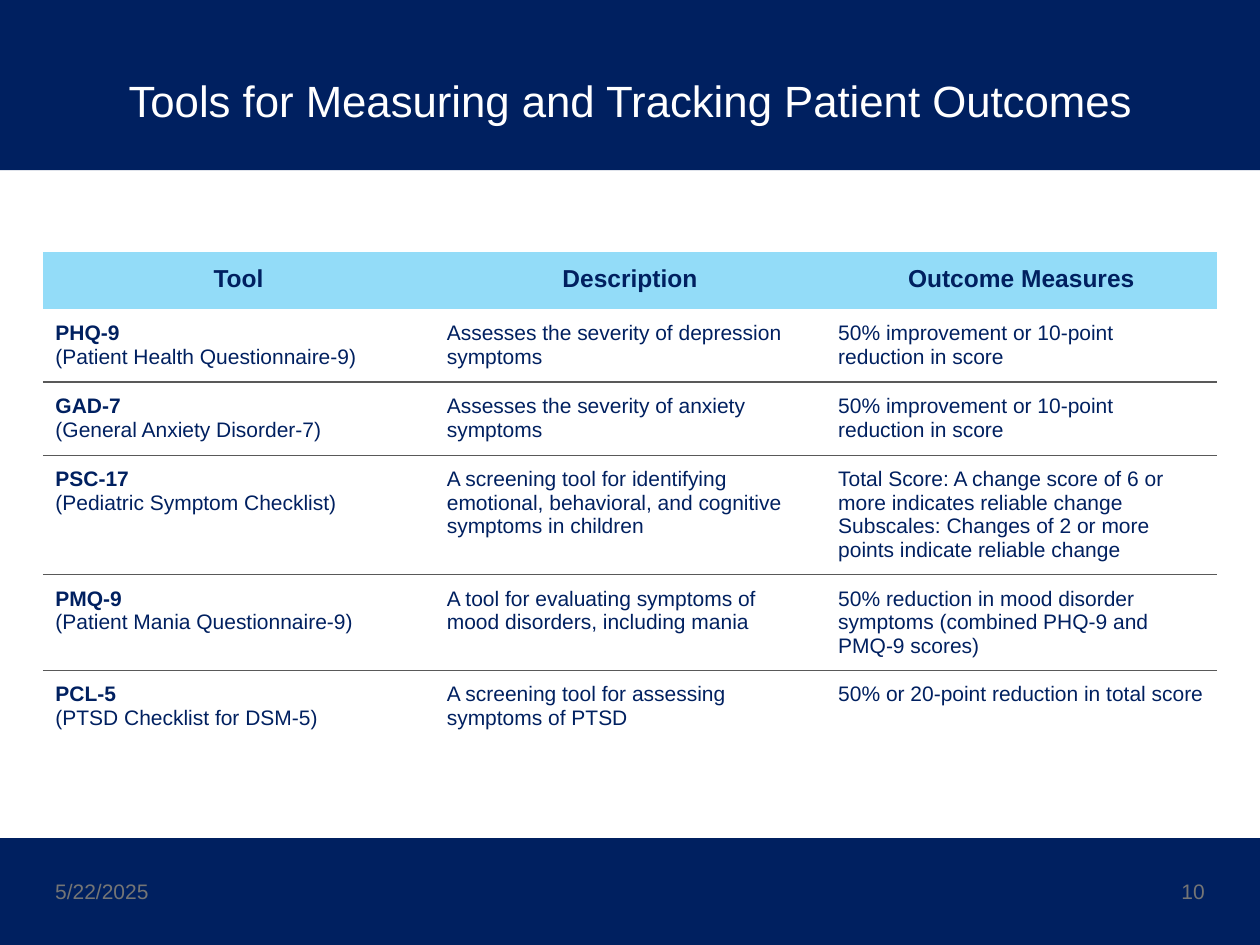
from dataclasses import dataclass

from lxml import etree
from pptx import Presentation
from pptx import util as u
from pptx.dml.color import RGBColor
from pptx.enum import shapes, text
from pptx.oxml.ns import qn

WIDTH, HEIGHT = u.Inches(10), u.Inches(7.5)
NAVY, SKY, WHITE, GRAY, RULE = "002060", "93DCF8", "FFFFFF", "757575", "595959"
NO_STYLE = "{2D5ABB26-0587-4C30-8999-92F81FD0307C}"
MARGIN = 0.034
CONTENT = 1 - 2 * MARGIN
HEADER_ROW, BODY_ROW = u.Inches(0.45), u.Inches(0.58)
INSET = u.Inches(0.1)


@dataclass
class Box:
    left: float
    top: float
    width: float
    height: float

    def lengths(self) -> tuple[int, int, int, int]:
        return (int(self.left * WIDTH), int(self.top * HEIGHT),
                int(self.width * WIDTH), int(self.height * HEIGHT))


@dataclass
class Tool:
    name: str
    full_name: str
    description: str
    outcomes: str

    def cells(self) -> list[str]:
        return [f"{self.name}\n({self.full_name})", self.description, self.outcomes]


@dataclass
class Style:
    size: float
    color: str
    bold: bool = False
    align: text.PP_ALIGN = text.PP_ALIGN.LEFT


HEADINGS = ["Tool", "Description", "Outcome Measures"]
TOOLS = [
    Tool("PHQ-9", "Patient Health Questionnaire-9",
         "Assesses the severity of depression symptoms",
         "50% improvement or 10-point reduction in score"),
    Tool("GAD-7", "General Anxiety Disorder-7",
         "Assesses the severity of anxiety symptoms",
         "50% improvement or 10-point reduction in score"),
    Tool("PSC-17", "Pediatric Symptom Checklist",
         "A screening tool for identifying emotional, behavioral, and cognitive symptoms in children",
         "Total Score: A change score of 6 or more indicates reliable change\n"
         "Subscales: Changes of 2 or more points indicate reliable change"),
    Tool("PMQ-9", "Patient Mania Questionnaire-9",
         "A tool for evaluating symptoms of mood disorders, including mania",
         "50% reduction in mood disorder symptoms (combined PHQ-9 and PMQ-9 scores)"),
    Tool("PCL-5", "PTSD Checklist for DSM-5",
         "A screening tool for assessing symptoms of PTSD",
         "50% or 20-point reduction in total score"),
]


def rgb(color: str) -> RGBColor:
    return RGBColor.from_string(color)


def write(frame, content: str, style: Style) -> None:
    frame.text = content
    for paragraph in frame.paragraphs:
        paragraph.alignment = style.align
        paragraph.font.name = "Arial"
        paragraph.font.size = u.Pt(style.size)
        paragraph.font.bold = style.bold
        paragraph.font.color.rgb = rgb(style.color)


def set_insets(target) -> None:
    target.margin_left = target.margin_right = INSET
    target.margin_top = target.margin_bottom = INSET


def add_band(slide, box: Box) -> None:
    band = slide.shapes.add_shape(shapes.MSO_SHAPE.RECTANGLE, *box.lengths())
    band.shadow.inherit = False
    band.fill.solid()
    band.fill.fore_color.rgb = rgb(NAVY)
    band.line.fill.background()


def add_label(slide, box: Box, content: str, style: Style) -> None:
    label = slide.shapes.add_textbox(*box.lengths())
    frame = label.text_frame
    frame.word_wrap = True
    frame.vertical_anchor = text.MSO_ANCHOR.MIDDLE
    write(frame, content, style)


def place_title(slide, box: Box, content: str) -> None:
    title = slide.shapes.title
    title.left, title.top, title.width, title.height = box.lengths()
    frame = title.text_frame
    set_insets(frame)
    frame.auto_size = text.MSO_AUTO_SIZE.NONE
    frame.vertical_anchor = text.MSO_ANCHOR.MIDDLE
    write(frame, content, Style(25, WHITE, align=text.PP_ALIGN.CENTER))
    frame.paragraphs[0].line_spacing = 0.9
    slide.shapes._spTree.append(title._element)


def rule_below(cell) -> None:
    line = etree.Element(qn("a:lnB"), w=str(u.Pt(0.75)))
    fill = etree.SubElement(line, qn("a:solidFill"))
    etree.SubElement(fill, qn("a:srgbClr"), val=RULE)
    cell._tc.get_or_add_tcPr().insert(0, line)


def add_tools_table(slide, box: Box) -> None:
    rows = [HEADINGS] + [tool.cells() for tool in TOOLS]
    frame = slide.shapes.add_table(len(rows), len(HEADINGS), *box.lengths())
    table = frame.table
    table._tbl.tblPr.find(qn("a:tableStyleId")).text = NO_STYLE
    heading = Style(14, NAVY, True, text.PP_ALIGN.CENTER)
    body = Style(12, NAVY)
    for r, contents in enumerate(rows):
        table.rows[r].height = BODY_ROW if r else HEADER_ROW
        for c, content in enumerate(contents):
            cell = table.cell(r, c)
            set_insets(cell)
            write(cell.text_frame, content, body if r else heading)
            if r == 0:
                cell.fill.solid()
                cell.fill.fore_color.rgb = rgb(SKY)
            else:
                cell.fill.background()
                cell.text_frame.paragraphs[0].font.bold = c == 0
                if r < len(rows) - 1:
                    rule_below(cell)


def main() -> None:
    presentation = Presentation()
    presentation.slide_width, presentation.slide_height = WIDTH, HEIGHT
    slide = presentation.slides.add_slide(presentation.slide_layouts[5])
    add_band(slide, Box(0, 0.887, 1, 0.113))
    add_band(slide, Box(0, 0, 1, 0.18))
    add_tools_table(slide, Box(MARGIN, 0.267, CONTENT, 0.54))
    add_label(slide, Box(1 - MARGIN - 0.225, 0.917, 0.225, 0.053), "10",
              Style(12, GRAY, align=text.PP_ALIGN.RIGHT))
    add_label(slide, Box(MARGIN, 0.917, 0.5, 0.053), "5/22/2025", Style(12, GRAY))
    place_title(slide, Box(0.021, 0.062, 0.958, 0.094),
                "Tools for Measuring and Tracking Patient Outcomes")
    presentation.save("out.pptx")


if __name__ == "__main__":
    main()
